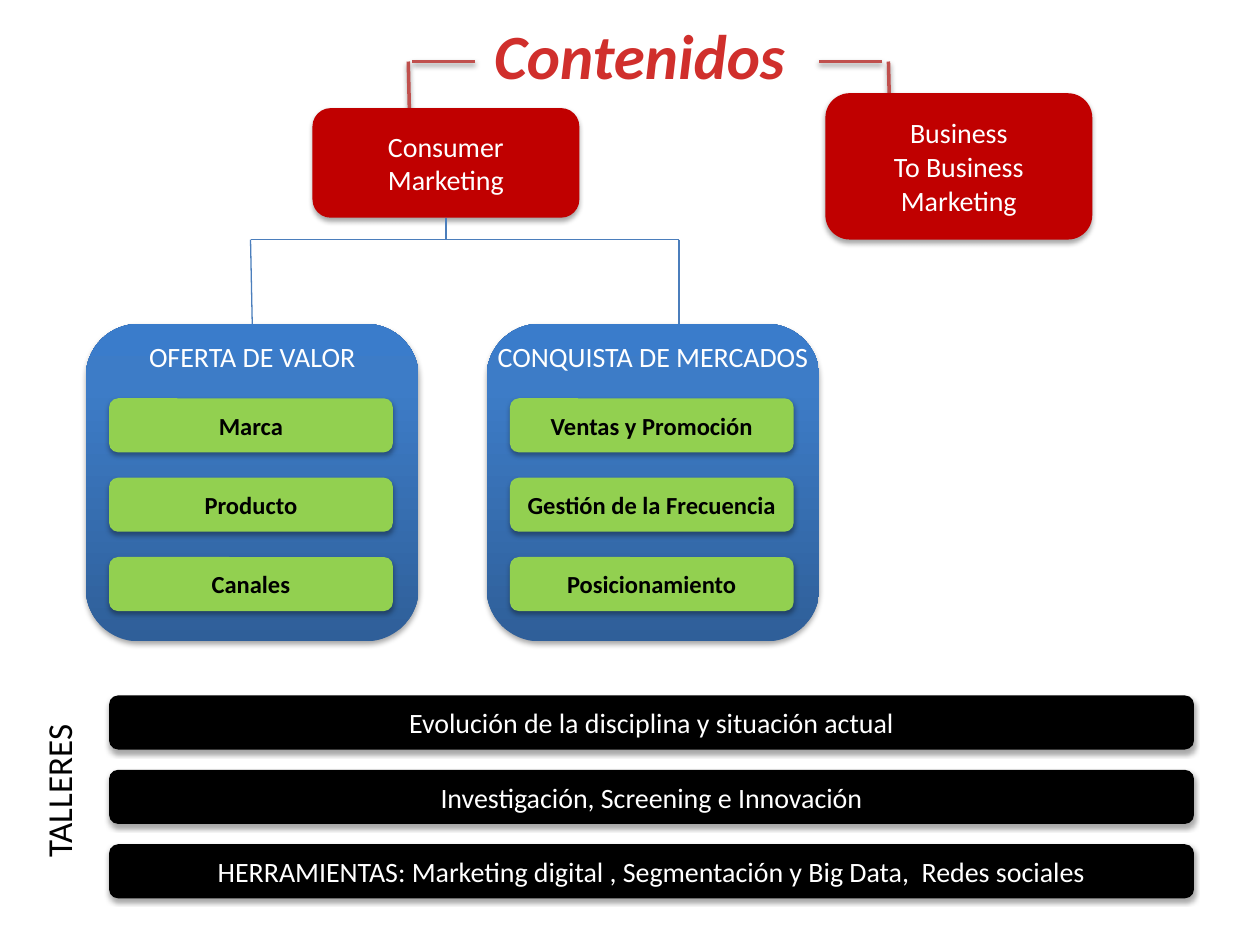
from copy import deepcopy

from lxml.etree import SubElement
from pptx import Presentation
from pptx.dml.color import RGBColor
from pptx.enum.shapes import MSO_CONNECTOR as CONNECTOR, MSO_SHAPE as SHAPE
from pptx.enum.text import MSO_ANCHOR as ANCHOR, MSO_AUTO_SIZE as AUTO_SIZE, PP_ALIGN as ALIGN
from pptx.oxml.ns import qn
from pptx.util import Cm, Pt

TITLE_RED = RGBColor(0xD0, 0x2F, 0x2C)
LINE_RED = RGBColor(0xC0, 0x50, 0x4D)
BOX_RED = RGBColor(0xC0, 0x00, 0x00)
LINE_BLUE = RGBColor(0x4B, 0x7E, 0xBC)
GREEN = RGBColor(0x92, 0xD0, 0x50)
BLACK = RGBColor(0x00, 0x00, 0x00)
WHITE = RGBColor(0xFF, 0xFF, 0xFF)
PANEL_STOPS = [
    (0, RGBColor(0x2F, 0x5F, 0x99)),
    (0.8, RGBColor(0x3D, 0x7C, 0xC7)),
    (1, RGBColor(0x3A, 0x7C, 0xCB)),
]


def write(sp, text, size=16, color=WHITE, bold=False, italic=False, wrap=True):
    """Fill a shape with centred text, one paragraph per line."""
    tf = sp.text_frame
    tf.word_wrap = wrap
    if not wrap:
        tf.auto_size = AUTO_SIZE.SHAPE_TO_FIT_TEXT
    tf.text = text
    for p in tf.paragraphs:
        p.alignment = ALIGN.CENTER
        f = p.runs[0].font
        f.name, f.size, f.bold, f.italic = "Calibri", Pt(size), bold, italic
        f.color.rgb = color


def set_shadow(sp, alpha=0, dist=0):
    """Give a downward shadow of alpha percent, or none; call after the line is set."""
    effects = SubElement(sp._element.spPr, qn("a:effectLst"))
    if alpha:
        shadow = SubElement(effects, qn("a:outerShdw"), blurRad=str(Pt(3.1)),
                            dist=str(Pt(dist)), dir="5400000", rotWithShape="0")
        color = SubElement(shadow, qn("a:srgbClr"), val=str(BLACK))
        SubElement(color, qn("a:alpha"), val=str(alpha * 1000))


prs = Presentation()
prs.slide_width, prs.slide_height = Cm(25.4), Cm(19.05)
s = prs.slides.add_slide(prs.slide_layouts[6])

# Red brackets beside the title
for x1, y1, x2, y2 in [
    (17.91, 1.24, 17.96, 3.4),
    (8.23, 1.24, 8.28, 3.4),
    (9.58, 1.24, 8.31, 1.24),
    (17.78, 1.24, 16.51, 1.24),
]:
    line = s.shapes.add_connector(CONNECTOR.STRAIGHT, Cm(x1), Cm(y1), Cm(x2), Cm(y2))
    line.line.color.rgb = LINE_RED
    line.line.width = Pt(2)
    set_shadow(line, alpha=38, dist=1.6)

# Free-standing labels
title = s.shapes.add_textbox(Cm(9.68), Cm(0.2), Cm(6.43), Cm(1.8))
write(title, "Contenidos", size=36, color=TITLE_RED, bold=True, italic=True, wrap=False)
workshops = s.shapes.add_textbox(Cm(-0.43), Cm(15.39), Cm(3.23), Cm(1.12))
workshops.rotation = 270
write(workshops, "TALLERES", size=20, color=BLACK, wrap=False)

# Boxes: parent, left, top, width, height, fill (None for a panel), text
boxes = [
    (s, 6.3, 2.18, 5.38, 2.21, BOX_RED, "Consumer\nMarketing"),
    (s, 16.64, 1.88, 5.38, 2.95, BOX_RED, "Business\nTo Business\nMarketing"),
]
panels = [
    ("OFERTA DE VALOR", 4.75, ["Marca", "Producto", "Canales"]),
    ("CONQUISTA DE MERCADOS", 6.86,
     ["Ventas y Promoción", "Gestión de la Frecuencia", "Posicionamiento"]),
]
headings = []
for col, (heading, width, topics) in enumerate(panels):
    left = 1.73 + 8.08 * col
    group = s.shapes.add_group_shape()
    boxes.append((group, left, 6.53, 6.71, 6.4, None, ""))
    for row, topic in enumerate(topics):
        boxes.append((group, left + 0.47, 8.03 + 1.6 * row, 5.72, 1.09, GREEN, topic))
    headings.append((group, left + (6.71 - width) / 2, width, heading))

for row, text in enumerate([
    "Evolución de la disciplina y situación actual",
    "Investigación, Screening e Innovación",
    "HERRAMIENTAS: Marketing digital , Segmentación y Big Data,  Redes sociales",
]):
    boxes.append((s, 2.2, 14.02 + 1.5 * row, 21.87, 1.09, BLACK, text))

drawn = []
for parent, left, top, width, height, fill, text in boxes:
    sp = parent.shapes.add_shape(SHAPE.ROUNDED_RECTANGLE, Cm(left), Cm(top), Cm(width), Cm(height))
    if fill is None:
        sp.fill.gradient()
        sp.fill.gradient_angle = 90
        stops = sp._element.spPr.find(".//" + qn("a:gsLst"))
        stops.append(deepcopy(stops[-1]))
        for stop, (position, color) in zip(sp.fill.gradient_stops, PANEL_STOPS):
            stop.position, stop.color.rgb = position, color
    else:
        sp.fill.solid()
        sp.fill.fore_color.rgb = fill
    sp.line.fill.background()
    set_shadow(sp, alpha=35, dist=1.8)
    if fill == GREEN:
        write(sp, text, size=14, color=BLACK, bold=True)
    elif text:
        write(sp, text)
    sp.text_frame.vertical_anchor = ANCHOR.MIDDLE
    drawn.append(sp)

for group, left, width, heading in headings:
    label = group.shapes.add_textbox(Cm(left), Cm(6.73), Cm(width), Cm(0.94))
    write(label, heading, wrap=False)

# Blue tree from the consumer box to its two panels
consumer, offer_panel = drawn[0], drawn[2]
for x1, y1, x2, y2, start, end in [
    (8.99, 4.39, 8.99, 4.83, consumer, None),
    (5.05, 4.83, 13.69, 4.83, None, None),
    (5.05, 4.83, 5.08, 6.53, None, offer_panel),
    (13.69, 4.83, 13.69, 6.53, None, None),
]:
    line = s.shapes.add_connector(CONNECTOR.STRAIGHT, Cm(x1), Cm(y1), Cm(x2), Cm(y2))
    if start:
        line.begin_connect(start, 2)
    if end:
        line.end_connect(end, 0)
    line.line.color.rgb = LINE_BLUE
    line.line.width = Pt(0.75)
    set_shadow(line)

prs.save("out.pptx")
